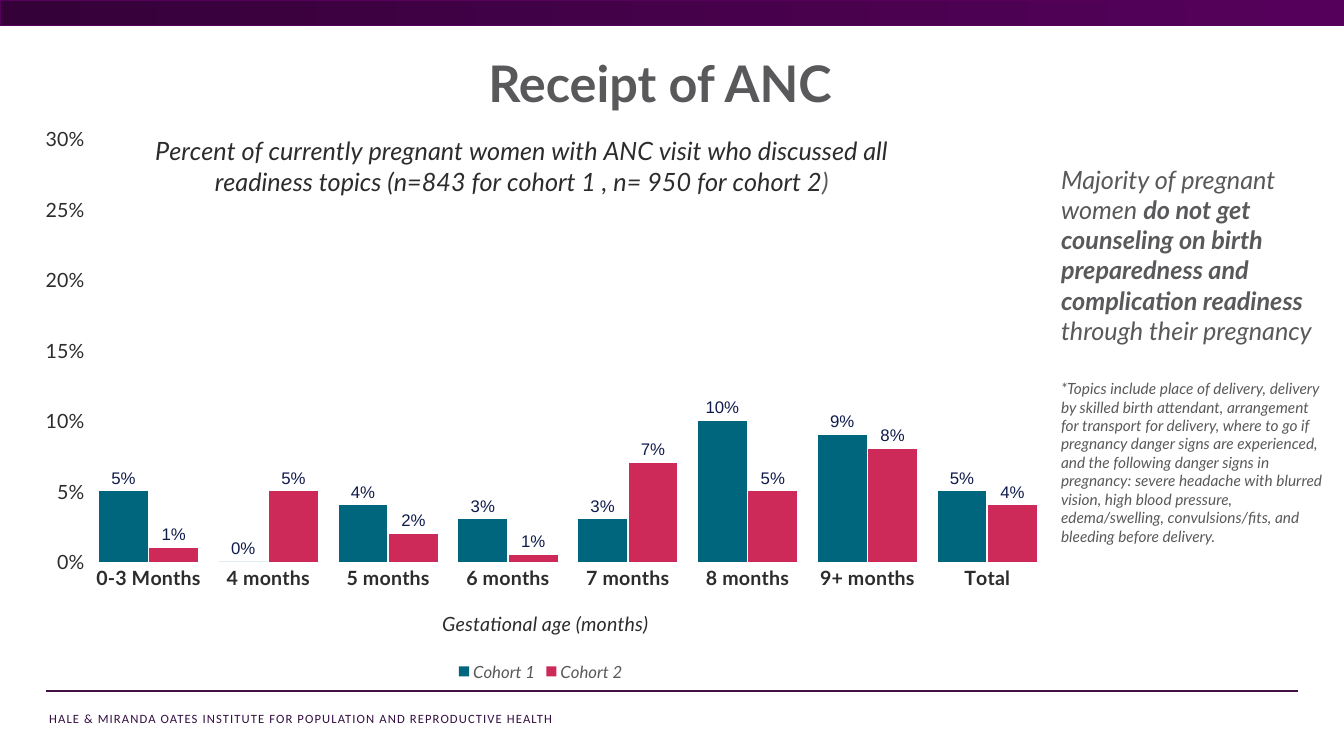
from lxml import etree
from pptx import Presentation
from pptx.chart.data import CategoryChartData
from pptx.dml.color import RGBColor
from pptx.enum.chart import XL_CHART_TYPE, XL_LABEL_POSITION, XL_LEGEND_POSITION, XL_TICK_MARK
from pptx.enum.shapes import MSO_CONNECTOR, MSO_SHAPE
from pptx.enum.text import MSO_ANCHOR, PP_ALIGN
from pptx.oxml.ns import qn
from pptx.util import Cm, Pt

COLUMNS = XL_CHART_TYPE.COLUMN_CLUSTERED
OUTSIDE = XL_LABEL_POSITION.OUTSIDE_END
BOTTOM = XL_LEGEND_POSITION.BOTTOM
NO_TICK = XL_TICK_MARK.NONE
STRAIGHT = MSO_CONNECTOR.STRAIGHT
RECT = MSO_SHAPE.RECTANGLE
MIDDLE = MSO_ANCHOR.MIDDLE
CENTER = PP_ALIGN.CENTER
LEFT = PP_ALIGN.LEFT

COLORS = {
    "grey": "59595B", "ink": "2C2C2D", "navy": "0F1B4B", "teal": "00667D", "pink": "CD2959",
    "plum": "350139", "purple": "55015B", "rule": "411044", "footer": "330F42",
}
MONTHS = ["0-3 Months", "4 months", "5 months", "6 months", "7 months", "8 months", "9+ months", "Total"]
COHORTS = [
    ("Cohort 1", "teal", [0.05, 0, 0.04, 0.03, 0.03, 0.1, 0.09, 0.05]),
    ("Cohort 2", "pink", [0.01, 0.05, 0.02, 0.005, 0.07, 0.05, 0.08, 0.04]),
]
CHART_TITLE = ("Percent of currently pregnant women with ANC visit who discussed all readiness topics "
               "(n=843 for cohort 1 , n= 950 for cohort 2")
TOPICS = ("*Topics include place of delivery, delivery by skilled birth attendant, arrangement for "
          "transport for delivery, where to go if pregnancy danger signs are experienced, and the "
          "following danger signs in pregnancy: severe headache with blurred vision, high blood "
          "pressure, edema/swelling, convulsions/fits, and bleeding before delivery.")


def rgb(name):
    return RGBColor.from_string(COLORS[name])


class Deck:
    font = "Lato"

    def __init__(self):
        self.prs = Presentation()
        self.prs.slide_width, self.prs.slide_height = Cm(33.87), Cm(19.05)
        self.s = self.prs.slides.add_slide(self.prs.slide_layouts[5])

    def style(self, f, size, color="grey", bold=False, italic=False, name=None):
        f.name, f.size, f.bold, f.italic = name or self.font, Pt(size), bold, italic
        f.color.rgb = rgb(color)

    def run(self, p, text, size, color="grey", **look):
        r = p.add_run()
        r.text = text
        self.style(r.font, size, color, **look)
        return r

    def title(self, box, text, size):
        sp = self.s.shapes.title
        sp.left, sp.top, sp.width, sp.height = map(Cm, box)
        sp.text_frame.vertical_anchor = MIDDLE
        p = sp.text_frame.paragraphs[0]
        p.alignment = CENTER
        self.run(p, text, size, bold=True)

    def text(self, box):
        tf = self.s.shapes.add_textbox(*map(Cm, box)).text_frame
        tf.word_wrap = True
        tf.paragraphs[0].alignment = LEFT
        return tf

    def band(self, box, start, end):
        sp = self.s.shapes.add_shape(RECT, *map(Cm, box))
        sp.shadow.inherit = False
        sp.fill.gradient()
        sp.fill.gradient_angle = 0
        for stop, color in zip(sp.fill.gradient_stops, (start, end)):
            stop.color.rgb = rgb(color)
        sp.line.color.rgb = rgb(end)
        sp.line.width = Pt(1)

    def rule(self, x1, x2, y, color, width):
        line = self.s.shapes.add_connector(STRAIGHT, Cm(x1), Cm(y), Cm(x2), Cm(y))
        line.line.color.rgb = rgb(color)
        line.line.width = Pt(width)
        etree.SubElement(line.element.spPr, qn("a:effectLst"))

    def layout(self, parent, index, **values):
        old = parent.find(qn("c:layout"))
        if old is not None:
            parent.remove(old)
        layout = etree.Element(qn("c:layout"))
        manual = etree.SubElement(layout, qn("c:manualLayout"))
        for key, value in values.items():
            etree.SubElement(manual, qn(f"c:{key}")).set("val", str(value))
        parent.insert(index, layout)

    def axis(self, axis, bold=False):
        axis.has_major_gridlines = False
        axis.major_tick_mark = axis.minor_tick_mark = NO_TICK
        axis.format.line.fill.background()
        self.style(axis.tick_labels.font, 14, "ink", bold=bold)

    def chart(self, box):
        data = CategoryChartData(number_format="0%")
        data.categories = MONTHS
        for name, _, values in COHORTS:
            data.add_series(name, values)
        chart = self.s.shapes.add_chart(COLUMNS, *map(Cm, box), data).chart
        self.style(chart.font, 10, name="Arial")

        chart.has_title = True
        title = chart.chart_title
        p = title.text_frame.paragraphs[0]
        p.alignment = CENTER
        self.run(p, CHART_TITLE, 18, "ink", italic=True)
        self.run(p, ")", 18, italic=True)
        self.layout(title.format and title._element, 1, xMode="edge", yMode="edge", x=0.12, y=0.02)
        self.layout(chart.element.find(f".//{qn('c:plotArea')}"), 0, layoutTarget="inner",
                    xMode="edge", yMode="edge", x=0.058, y=0.035, w=0.937, h=0.747)

        self.axis(chart.category_axis, bold=True)
        axis_title = chart.category_axis.axis_title
        self.run(axis_title.text_frame.paragraphs[0], "Gestational age (months)", 14, "ink", italic=True)
        self.layout(axis_title._element, 1, xMode="edge", yMode="edge", x=0.4, y=0.86)
        values = chart.value_axis
        self.axis(values)
        values.minimum_scale, values.maximum_scale, values.major_unit = 0, 0.3, 0.05
        values.tick_labels.number_format = "0%"
        values.tick_labels.number_format_is_linked = False

        chart.has_legend = True
        chart.legend.position = BOTTOM
        chart.legend.include_in_layout = False
        self.style(chart.legend.font, 12, italic=True)

        plot = chart.plots[0]
        plot.gap_width, plot.overlap, plot.vary_by_categories = 42, -3, False
        for series, (_, color, _) in zip(plot.series, COHORTS):
            series.format.fill.solid()
            series.format.fill.fore_color.rgb = rgb(color)
            labels = series.data_labels
            labels.show_value = True
            labels.position = OUTSIDE
            labels.number_format = "0%"
            labels.number_format_is_linked = False
            self.style(labels.font, 12, "navy", name="Arial")


def main():
    deck = Deck()
    deck.band((0, 0, 33.87, 0.64), "plum", "purple")
    deck.rule(1.17, 32.72, 17.42, "rule", 1.25)
    footer = deck.text((0.99, 17.8, 18.75, 0.64)).paragraphs[0]
    r = deck.run(footer, "HALE & MIRANDA OATES INSTITUTE FOR POPULATION AND REPRODUCTIVE HEALTH",
                 9, "footer", name="Calibri")
    r.font._element.set("spc", "80")

    deck.title((1.6, 1.17, 30.07, 1.83), "Receipt of ANC", 36)
    deck.chart((0.74, 3, 25.78, 14.27))

    tf = deck.text((26.49, 4.01, 7.24, 12.07))
    p = tf.paragraphs[0]
    deck.run(p, "Majority of pregnant women ", 18, italic=True)
    deck.run(p, "do not get counseling on birth preparedness and complication readiness ", 18,
             bold=True, italic=True)
    deck.run(p, "through their pregnancy", 18, italic=True)
    p = tf.add_paragraph()
    p.space_before = Pt(24)
    deck.run(p, TOPICS, 11, italic=True)
    deck.prs.save("out.pptx")


if __name__ == "__main__":
    main()
